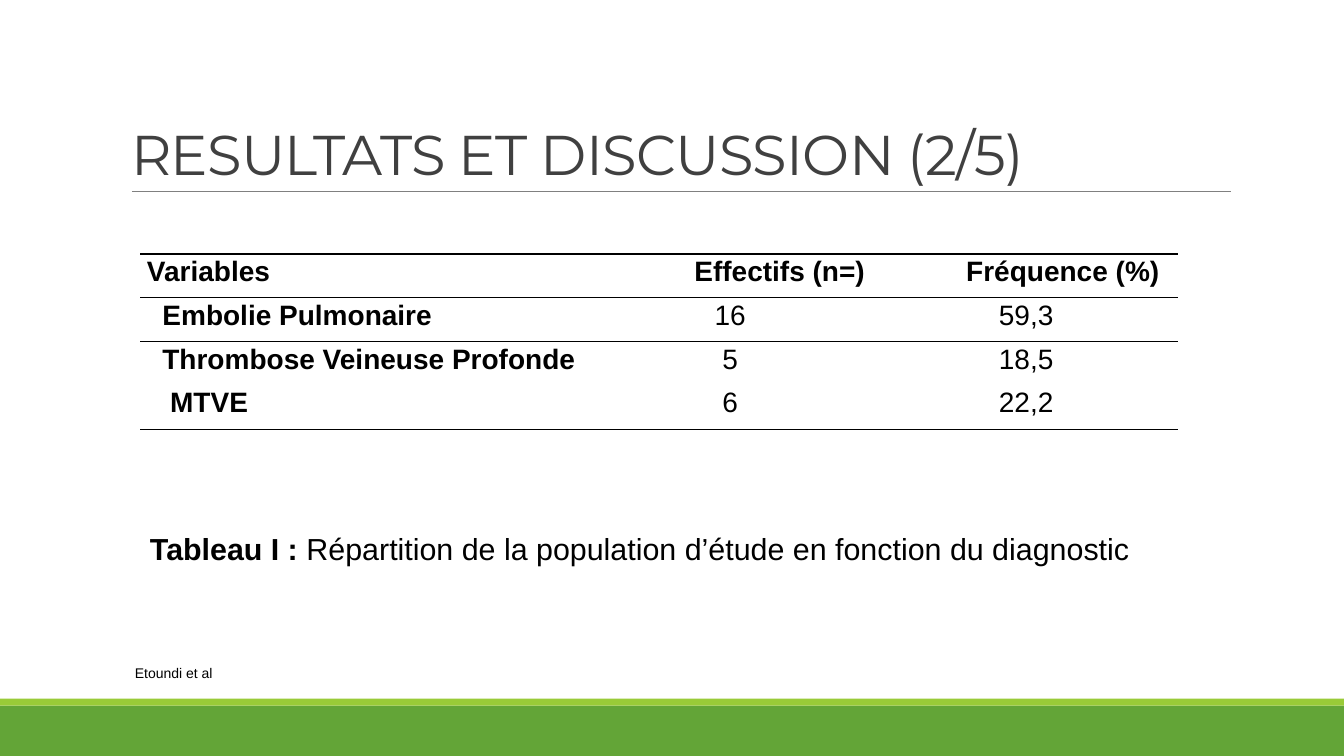
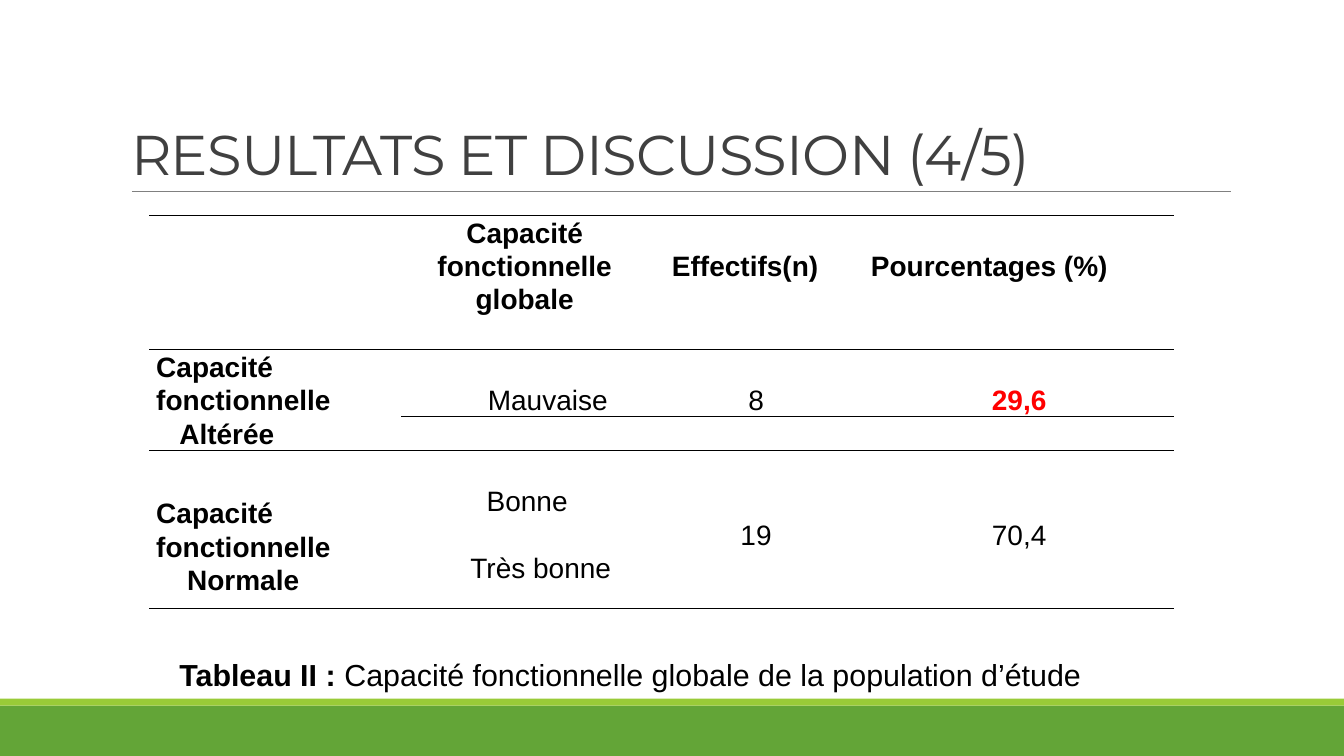
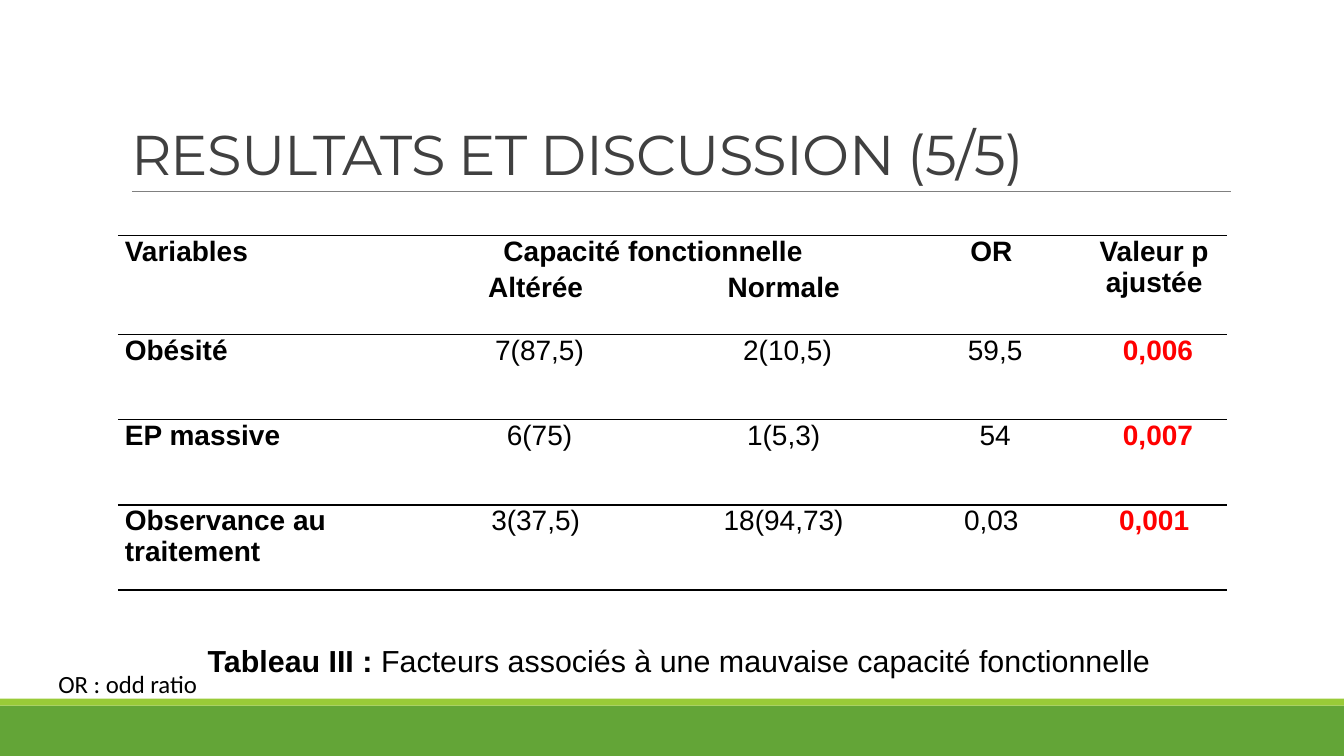
import dataclasses
import functools

import lxml.etree
import pptx
import pptx.dml.color
import pptx.enum.shapes
import pptx.enum.text
import pptx.oxml.ns
import pptx.util

Pt = pptx.util.Pt
Align = pptx.enum.text.PP_ALIGN
Anchor = pptx.enum.text.MSO_ANCHOR
NO_TABLE_STYLE = "{2D5ABB26-0587-4C30-8999-92F81FD0307C}"


@dataclasses.dataclass(frozen=True)
class Theme:
    band: str = "63A537"
    stripe: str = "99CB38"
    title_rule: str = "808080"
    title: str = "404040"
    text: str = "000000"
    alert: str = "FF0000"
    title_font: str = "Montserrat"
    text_font: str = "Arial"
    note_font: str = "Calibri"
    title_size: float = 40
    caption_size: float = 21.7
    table_size: float = 20
    note_size: float = 17.7
    credit_size: float = 10
    empty_size: float = 10


THEME = Theme()


@dataclasses.dataclass
class Entry:
    text: str
    bold: bool = False
    align: int = Align.CENTER
    indent: float = 0
    drop: float = 0
    color: str = THEME.text


Heading = functools.partial(Entry, bold=True)
Label = functools.partial(Entry, bold=True, align=Align.LEFT)
Alert = functools.partial(Entry, bold=True, color=THEME.alert)


def rgb(color):
    return pptx.dml.color.RGBColor.from_string(color)


class Deck:
    """Hold the theme and the current slide, and draw each kind of element."""

    def __init__(self, theme):
        self.theme = theme
        self.presentation = pptx.Presentation()
        self.presentation.slide_width = Pt(960)
        self.presentation.slide_height = Pt(540)
        self.layout = self.presentation.slide_layouts[5]
        self.slide = None

    def add_slide(self, title):
        first = self.slide is None
        self.slide = self.presentation.slides.add_slide(self.layout)
        if first:
            self.add_shared_parts()
        shape = self.slide.shapes.title
        shape.left, shape.top, shape.width, shape.height = Pt(86.4), Pt(22.3), Pt(792), Pt(114.5)
        frame = shape.text_frame
        frame.text = title
        frame.word_wrap = True
        frame.auto_size = pptx.enum.text.MSO_AUTO_SIZE.NONE
        frame.vertical_anchor = Anchor.BOTTOM
        paragraph = frame.paragraphs[0]
        paragraph.alignment = Align.LEFT
        paragraph.line_spacing = 0.85
        run = paragraph.runs[0]
        self.format_run(run, self.theme.title_size, self.theme.title, font=self.theme.title_font)
        run.font._element.set("spc", "-50")

    def add_shared_parts(self):
        parts = [
            self.add_band(504, 36, self.theme.band),
            self.add_band(499, 5, self.theme.stripe),
            self.add_line(94.3, 879.1, 136.8, self.theme.title_rule),
        ]
        for part in parts:
            self.layout.shapes.element.append(part.element)

    def add_band(self, top, height, color):
        shape = self.slide.shapes.add_shape(
            pptx.enum.shapes.MSO_SHAPE.RECTANGLE, 0, Pt(top), Pt(960), Pt(height))
        shape.shadow.inherit = False
        shape.fill.solid()
        shape.fill.fore_color.rgb = rgb(color)
        shape.line.fill.background()
        return shape

    def add_line(self, left, right, top, color):
        line = self.slide.shapes.add_connector(
            pptx.enum.shapes.MSO_CONNECTOR.STRAIGHT, Pt(left), Pt(top), Pt(right), Pt(top))
        line.line.color.rgb = rgb(color)
        line.line.width = Pt(0.5)
        properties = line.element.find(pptx.oxml.ns.qn("p:spPr"))
        lxml.etree.SubElement(properties, pptx.oxml.ns.qn("a:effectLst"))
        return line

    def format_run(self, run, size, color, bold=False, font=None):
        run.font.name = font or self.theme.text_font
        run.font.size = Pt(size)
        run.font.bold = bold
        run.font.color.rgb = rgb(color)

    def add_text(self, left, top, width, height, text, size, font=None):
        shape = self.slide.shapes.add_textbox(Pt(left), Pt(top), Pt(width), Pt(height))
        shape.text_frame.word_wrap = True
        shape.text_frame.text = text
        paragraph = shape.text_frame.paragraphs[0]
        self.format_run(paragraph.runs[0], size, self.theme.text, font=font)
        return paragraph

    def add_caption(self, left, top, width, number, text, align=Align.LEFT):
        size = self.theme.caption_size
        paragraph = self.add_text(left, top, width, 34.6, f"Tableau {number} : ", size)
        paragraph.runs[0].font.bold = True
        paragraph.alignment = align
        paragraph.line_spacing = 1.15
        run = paragraph.add_run()
        run.text = text
        self.format_run(run, size, self.theme.text)

    def add_table(self, left, top, columns, heights, rows, rules, merges=(),
                  anchor=Anchor.TOP, spacing=1.07):
        table = self.slide.shapes.add_table(
            len(rows), len(columns), Pt(left), Pt(top), Pt(sum(columns)), Pt(sum(heights))).table
        table.first_row = table.horz_banding = False
        table._tbl.tblPr.find(pptx.oxml.ns.qn("a:tableStyleId")).text = NO_TABLE_STYLE
        for column, width in zip(table.columns, columns):
            column.width = Pt(width)
        for row, height in zip(table.rows, heights):
            row.height = Pt(height)
        for first_row, first_column, last_row, last_column in merges:
            table.cell(first_row, first_column).merge(table.cell(last_row, last_column))
        for edge, first, last in rules:
            for column in range(first, last + 1):
                self.add_rule(table, edge, column)
        for row, entries in enumerate(rows):
            for column, entry in enumerate(entries):
                self.fill_cell(table.cell(row, column), entry, anchor, spacing)

    def add_rule(self, table, edge, column):
        if edge < len(table.rows):
            self.add_border(table.cell(edge, column), "a:lnT")
        row = edge - 1
        while row >= 0:
            cell = table.cell(row, column)
            self.add_border(cell, "a:lnB")
            if not cell.is_spanned:
                break
            row -= 1

    def add_border(self, cell, side):
        properties = cell._tc.get_or_add_tcPr()
        border = lxml.etree.SubElement(properties, pptx.oxml.ns.qn(side), w=str(Pt(1)))
        fill = lxml.etree.SubElement(border, pptx.oxml.ns.qn("a:solidFill"))
        lxml.etree.SubElement(fill, pptx.oxml.ns.qn("a:srgbClr"), val=self.theme.text)

    def fill_cell(self, cell, entry, anchor, spacing):
        cell.fill.background()
        cell.vertical_anchor = anchor
        cell.margin_left = cell.margin_right = Pt(5)
        cell.margin_top = cell.margin_bottom = 0
        paragraphs = cell.text_frame.paragraphs
        if entry is None:
            ending = paragraphs[0]._p.get_or_add_endParaRPr()
            ending.set("sz", str(int(self.theme.empty_size * 100)))
            return
        cell.margin_top = Pt(entry.drop)
        cell.text_frame.text = entry.text
        paragraphs = cell.text_frame.paragraphs
        for paragraph in paragraphs:
            paragraph.alignment = entry.align
            paragraph.line_spacing = spacing
            self.format_run(paragraph.runs[0], self.theme.table_size, entry.color, entry.bold)
        paragraphs[-1]._p.get_or_add_pPr().set("marL", str(Pt(entry.indent)))


def add_diagnosis_slide(deck):
    deck.add_slide("RESULTATS ET DISCUSSION (2/5)")
    rows = [
        [Label("Variables"), Label("Effectifs (n=)", indent=72), Label("Fréquence (%)", indent=61)],
        [Label("Embolie Pulmonaire", indent=11), Entry("16"), Entry("59,3")],
        [Label("Thrombose Veineuse Profonde", indent=11), Entry("5"), Entry("18,5")],
        [Label("MTVE", indent=16.5), Entry("6"), Entry("22,2")],
    ]
    deck.add_table(100, 181.4, [319, 205.2, 217.6], [31.3] * 4, rows,
                   rules=[(edge, 0, 2) for edge in (0, 1, 4)])
    deck.add_text(89.3, 470.9, 633.6, 19.4, "Etoundi et al", deck.theme.credit_size)
    deck.add_caption(100, 371.5, 742.3, "I",
                     "Répartition de la population d’étude en fonction du diagnostic")


def add_capacity_slide(deck):
    deck.add_slide("RESULTATS ET DISCUSSION (4/5)")
    rows = [
        [None, Heading("Capacité fonctionnelle globale"), Label("Effectifs(n)", indent=12),
         Label("Pourcentages (%)")],
        [None] * 4,
        [Label("Capacité fonctionnelle\nAltérée", indent=16.5),
         Entry("Mauvaise", indent=33, drop=24), Entry("8", drop=24), Alert("29,6", drop=24)],
        [None] * 4,
        [Label("Capacité fonctionnelle\nNormale", indent=22, drop=24),
         Entry("Bonne", align=Align.LEFT, indent=56), Entry("19", drop=48),
         Entry("70,4", drop=48)],
        [None, Entry("Très bonne", indent=23), None, None],
        [None] * 4,
    ]
    deck.add_table(106.6, 153.8, [180, 176.4, 154.1, 221.8], [72, 24, 48, 24, 72, 24, 17], rows,
                   rules=[(0, 0, 3), (2, 0, 3), (3, 1, 3), (4, 0, 0), (7, 0, 3)],
                   merges=[(0, 0, 1, 0), (2, 0, 3, 0), (4, 0, 6, 0)], anchor=Anchor.MIDDLE)
    deck.add_caption(121, 461.5, 758.9, "II",
                     "Capacité fonctionnelle globale de la population d’étude")


def add_factors_slide(deck):
    deck.add_slide("RESULTATS ET DISCUSSION (5/5)")
    shifted = functools.partial(Entry, indent=5.5)
    rows = [
        [Label("Variables"), Heading("Capacité fonctionnelle"), None, Heading("OR"),
         Heading("Valeur p ajustée")],
        [None, Heading("Altérée"), Heading("Normale"), None, None],
        [Label("Obésité"), shifted("7(87,5)"), shifted("2(10,5)"), shifted("59,5"),
         Alert("0,006", indent=5.5)],
        [Label("EP massive"), shifted("6(75)"), Entry("1(5,3)"), shifted("54"),
         Alert("0,007", indent=5.5)],
        [Label("Observance au traitement"), Entry("3(37,5)"), Entry("18(94,73)"), Entry("0,03"),
         Alert("0,001")],
    ]
    deck.add_table(84.2, 168.5, [205.2, 186.5, 167.8, 128.9, 103.7], [26, 44.6] + [60.8] * 3, rows,
                   rules=[(edge, 0, 4) for edge in (0, 2, 3, 5)],
                   merges=[(0, 1, 0, 2)] + [(0, column, 1, column) for column in (0, 3, 4)],
                   spacing=1)
    deck.add_caption(34.6, 451.5, 900.7, "III",
                     "Facteurs associés à une mauvaise capacité fonctionnelle", Align.CENTER)
    deck.add_text(34.6, 473.8, 453.6, 28.8, "OR : odd ratio", deck.theme.note_size,
                  deck.theme.note_font)


def main():
    deck = Deck(THEME)
    add_diagnosis_slide(deck)
    add_capacity_slide(deck)
    add_factors_slide(deck)
    deck.presentation.save("out.pptx")


if __name__ == "__main__":
    main()
